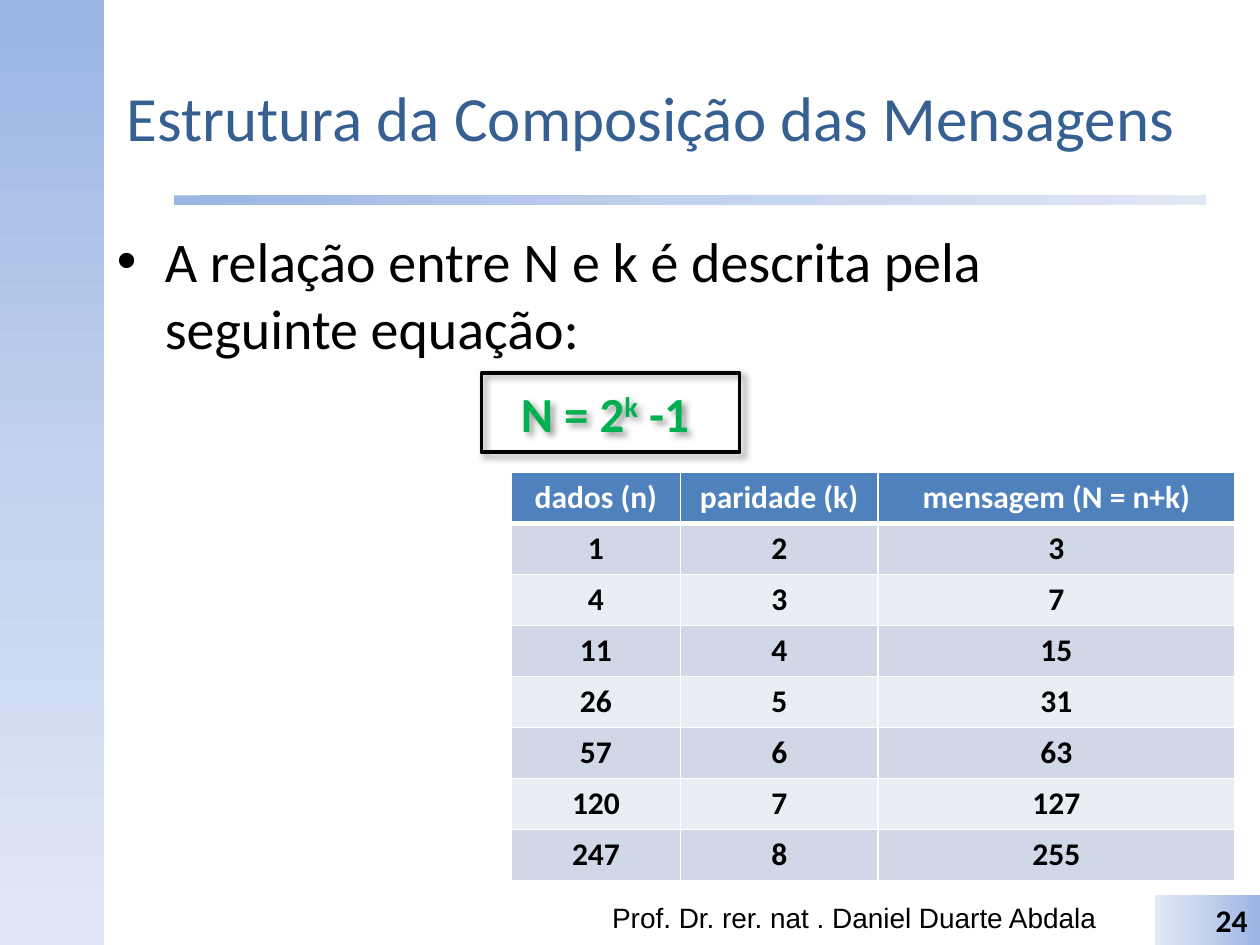
import lxml.etree
import pptx
import pptx.dml.color
import pptx.enum.shapes
import pptx.enum.text
import pptx.oxml
import pptx.oxml.ns
import pptx.util

Inches = pptx.util.Inches
Pt = pptx.util.Pt
SHAPES = pptx.enum.shapes.MSO_SHAPE
ALIGN = pptx.enum.text.PP_ALIGN
ANCHOR = pptx.enum.text.MSO_ANCHOR
qn = pptx.oxml.ns.qn

COLOURS = {
    "title": "376092", "text": "000000", "formula": "00B050", "white": "FFFFFF",
    "header": "4F81BD", "odd row": "D0D8E8", "even row": "E9EDF4",
}
BLUE_FADE = {0: "9AB5E4", 50: "C2D1ED", 100: "E1E8F5"}


def rgb(name):
    return pptx.dml.color.RGBColor.from_string(COLOURS[name])


def add_xml(parent, tag, **attributes):
    return lxml.etree.SubElement(
        parent, qn(tag), {key: str(value) for key, value in attributes.items()})


class SlideBuilder:
    """Holds the text style and the current slide."""

    def __init__(self, page, font="Calibri"):
        self.page = page
        self.font = font

    def fill_text(self, frame, spans, size, colour="text", align=ALIGN.LEFT,
                  anchor=ANCHOR.TOP, bold=False, font=None):
        """Set one paragraph; spans are (text, baseline percent) pairs."""
        frame.word_wrap = True
        frame.vertical_anchor = anchor
        para = frame.paragraphs[0]
        para.alignment = align
        style = {"name": font or self.font, "size": Pt(size), "bold": bold}
        for text, baseline in spans:
            span = para.add_run()
            span.text = text
            for key, value in style.items():
                setattr(span.font, key, value)
            span.font.color.rgb = rgb(colour)
            if baseline:
                span._r.get_or_add_rPr().set("baseline", str(baseline * 1000))
        return para

    def text(self, place, text, size, **style):
        box = self.page.shapes.add_textbox(*map(Inches, place))
        return self.fill_text(box.text_frame, [(text, 0)], size, **style)

    def bullet(self, place, text, size, indent):
        para = self.text(place, text, size)
        para.space_before = Pt(size * 0.2)
        properties = para._p.get_or_add_pPr()
        properties.set("marL", str(Inches(indent)))
        properties.set("indent", str(-Inches(indent)))
        add_xml(properties, "a:buFont", typeface="Arial")
        add_xml(properties, "a:buChar", char="•")

    def shape(self, kind, place):
        box = self.page.shapes.add_shape(kind, *map(Inches, place))
        box.shadow.inherit = False
        return box

    def fade(self, kind, place, angle):
        """Add a borderless shape with the blue fade, angle counter-clockwise."""
        box = self.shape(kind, place)
        box.line.fill.background()
        box.fill.gradient()
        box.fill.gradient_angle = angle
        stops = box._element.spPr.find(".//" + qn("a:gsLst"))
        for stop in list(stops):
            stops.remove(stop)
        for position, colour in BLUE_FADE.items():
            stop = add_xml(stops, "a:gs", pos=position * 1000)
            add_xml(stop, "a:srgbClr", val=colour)
        return box

    def formula(self, place, spans):
        box = self.shape(SHAPES.RECTANGLE, place)
        box.fill.background()
        box.line.color.rgb = rgb("text")
        box.line.width = Pt(2)
        effects = box._element.spPr.find(qn("a:effectLst"))
        shadow = add_xml(effects, "a:outerShdw", blurRad=Pt(4), dist=Pt(3),
                         dir=45 * 60000, algn="tl", rotWithShape=0)
        shade = add_xml(shadow, "a:srgbClr", val=COLOURS["text"])
        add_xml(shade, "a:alpha", val=40000)
        self.fill_text(box.text_frame, spans, 28, colour="formula", bold=True,
                       align=ALIGN.CENTER, anchor=ANCHOR.MIDDLE)

    def border(self, cell, widths):
        properties = cell._tc.get_or_add_tcPr()
        for index, (side, width) in enumerate(widths.items()):
            line = add_xml(properties, "a:ln" + side, w=Pt(width))
            fill = add_xml(line, "a:solidFill")
            add_xml(fill, "a:srgbClr", val=COLOURS["white"])
            properties.insert(index, line)

    def table(self, place, widths, rows):
        frame = self.page.shapes.add_table(
            len(rows), len(widths), *map(Inches, place))
        grid = frame.table
        for column, width in zip(grid.columns, widths):
            column.width = Inches(width)
        for r, values in enumerate(rows):
            grid.rows[r].height = Inches(place[3] / len(rows))
            fill = "header" if r == 0 else "odd row" if r % 2 else "even row"
            borders = {"L": 1, "R": 1, "T": 3 if r == 1 else 1,
                       "B": 3 if r == 0 else 1}
            for c, value in enumerate(values):
                cell = grid.cell(r, c)
                cell.fill.solid()
                cell.fill.fore_color.rgb = rgb(fill)
                self.border(cell, borders)
                self.fill_text(cell.text_frame, [(str(value), 0)], 18, bold=True,
                               colour="text" if r else "white", align=ALIGN.CENTER)


def main():
    deck = pptx.Presentation()
    deck.slide_width, deck.slide_height = Inches(10), Inches(7.5)
    builder = SlideBuilder(deck.slides.add_slide(deck.slide_layouts[6]))

    # Side band and rule under the title
    builder.fade(SHAPES.RECTANGLE, (0, 0, 0.83, 7.5), 270)
    builder.fade(SHAPES.ROUNDED_RECTANGLE, (1.38, 1.55, 8.19, 0.08), 0)

    # Title
    builder.text((0.83, 0.3, 8.67, 1.25), "Estrutura da Composição das Mensagens",
                 36, colour="title", align=ALIGN.CENTER, anchor=ANCHOR.MIDDLE)

    # Footer and page number
    builder.text((4.76, 7.1, 4.19, 0.4), "Prof. Dr. rer. nat . Daniel Duarte Abdala",
                 16, font="Arial")
    number = builder.fade(SHAPES.RECTANGLE, (9.17, 7.1, 0.83, 0.4), 180)
    builder.fill_text(number.text_frame, [("24", 0)], 18, bold=True,
                      align=ALIGN.RIGHT)

    # Statement
    builder.bullet((0.83, 1.75, 8.67, 4.95),
                   "A relação entre N e k é descrita pela seguinte equação:", 32, 0.38)

    # Message sizes: N = 2^k - 1 and n = N - k
    rows = [("dados (n)", "paridade (k)", "mensagem (N = n+k)")]
    rows += [(2 ** k - 1 - k, k, 2 ** k - 1) for k in range(2, 9)]
    builder.table((4.06, 3.75, 5.74, 3.24), (1.34, 1.57, 2.83), rows)

    # Equation
    builder.formula((3.82, 2.96, 2.05, 0.63), [("N = 2", 0), ("k", 30), (" -1 ", 0)])

    deck.save("out.pptx")


if __name__ == "__main__":
    main()
